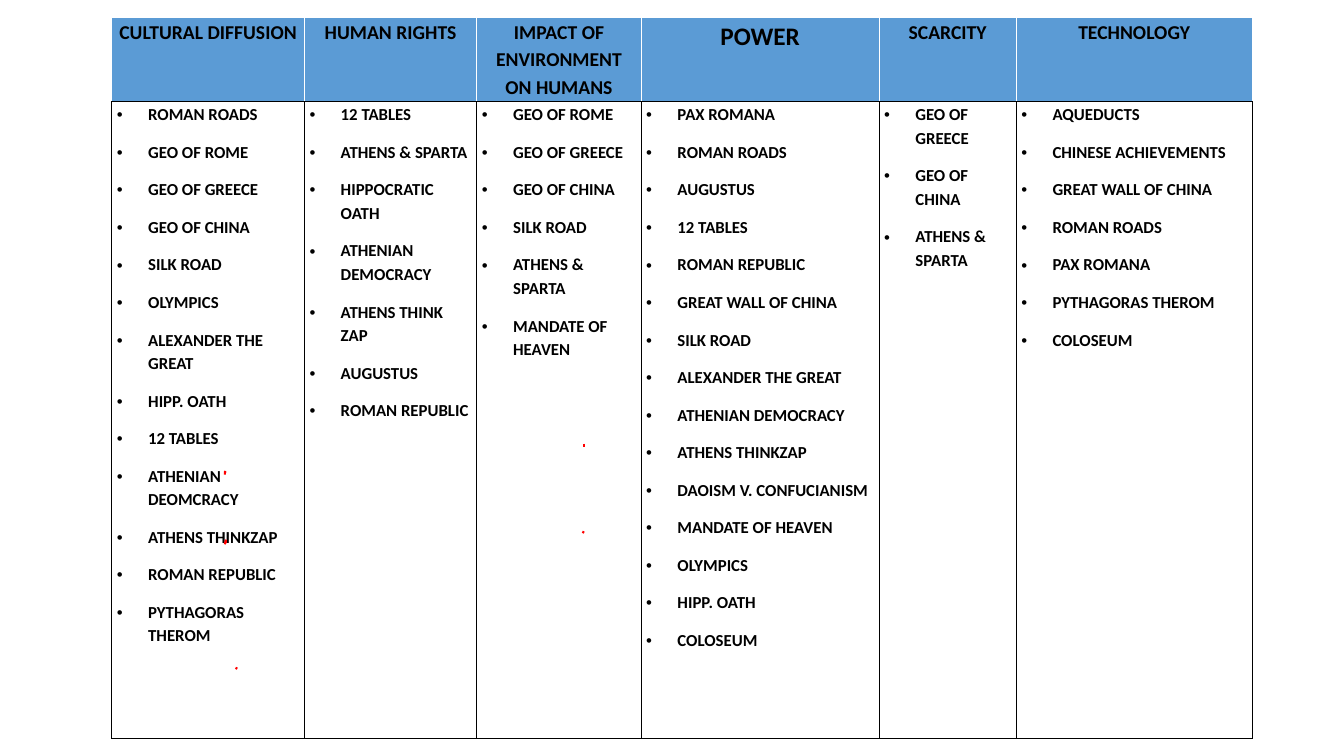
import dataclasses

import lxml.etree
import pptx
import pptx.dml.color
import pptx.enum.shapes
import pptx.enum.text
import pptx.oxml.ns
import pptx.table
import pptx.text.text
import pptx.util
from pptx.util import Inches

COLORS = {"header": "5B9BD5", "body": "FFFFFF", "text": "000000",
          "header_edge": "FFFFFF", "body_edge": "000000", "ink": "FF0000"}
FONT = "Calibri"
HEADER_HEIGHT, BODY_HEIGHT = 0.84, 6.32
TABLE_LEFT, TABLE_TOP = 1.11, 0.17
BULLET_INDENT = Inches(0.31)


@dataclasses.dataclass(frozen=True)
class Theme:
    heading: str
    width: float
    topics: tuple[str, ...]
    heading_size: int = 14


@dataclasses.dataclass(frozen=True)
class InkStroke:
    points: tuple[tuple[float, float], ...]


THEMES = (
    Theme("CULTURAL DIFFUSION", 1.91, (
        "ROMAN ROADS", "GEO OF ROME", "GEO OF GREECE", "GEO OF CHINA", "SILK ROAD",
        "OLYMPICS", "ALEXANDER THE GREAT", "HIPP. OATH", "12 TABLES",
        "ATHENIAN DEOMCRACY", "ATHENS THINKZAP", "ROMAN REPUBLIC", "PYTHAGORAS THEROM")),
    Theme("HUMAN RIGHTS", 1.71, (
        "12 TABLES", "ATHENS & SPARTA", "HIPPOCRATIC OATH", "ATHENIAN DEMOCRACY",
        "ATHENS THINK ZAP", "AUGUSTUS", "ROMAN REPUBLIC")),
    Theme("IMPACT OF ENVIRONMENT ON HUMANS", 1.63, (
        "GEO OF ROME", "GEO OF GREECE", "GEO OF CHINA", "SILK ROAD",
        "ATHENS & SPARTA", "MANDATE OF HEAVEN")),
    Theme("POWER", 2.36, (
        "PAX ROMANA", "ROMAN ROADS", "AUGUSTUS", "12 TABLES", "ROMAN REPUBLIC",
        "GREAT WALL OF CHINA", "SILK ROAD", "ALEXANDER THE GREAT",
        "ATHENIAN DEMOCRACY", "ATHENS THINKZAP", "DAOISM V. CONFUCIANISM",
        "MANDATE OF HEAVEN", "OLYMPICS", "HIPP. OATH", "COLOSEUM"), heading_size=18),
    Theme("SCARCITY", 1.36, ("GEO OF GREECE", "GEO OF CHINA", "ATHENS & SPARTA")),
    Theme("TECHNOLOGY", 2.34, (
        "AQUEDUCTS", "CHINESE ACHIEVEMENTS", "GREAT WALL OF CHINA", "ROMAN ROADS",
        "PAX ROMANA", "PYTHAGORAS THEROM", "COLOSEUM")),
)

INK_STROKES = (
    InkStroke(((2.24, 4.69), (2.23, 4.68), (2.23, 4.71))),
    InkStroke(((2.23, 5.4), (2.24, 5.36), (2.24, 5.39))),
    InkStroke(((2.35, 6.62), (2.34, 6.64))),
    InkStroke(((5.79, 4.4), (5.79, 4.43))),
    InkStroke(((5.79, 5.27), (5.78, 5.29))),
)


def rgb(name: str) -> pptx.dml.color.RGBColor:
    return pptx.dml.color.RGBColor.from_string(COLORS[name])


def add_element(parent, tag: str, **attributes: str):
    return lxml.etree.SubElement(parent, pptx.oxml.ns.qn(tag), attributes)


def write(frame: pptx.text.text.TextFrame, lines: tuple[str, ...], *, size: int,
          centered: bool = False, bulleted: bool = False) -> None:
    for index, line in enumerate(lines):
        paragraph = frame.add_paragraph() if index else frame.paragraphs[0]
        paragraph.line_spacing = 1.15
        paragraph.space_after = pptx.util.Pt(10)
        if centered:
            paragraph.alignment = pptx.enum.text.PP_ALIGN.CENTER
        if bulleted:
            properties = paragraph._p.get_or_add_pPr()
            properties.set("marL", str(BULLET_INDENT))
            properties.set("indent", str(-BULLET_INDENT))
            add_element(properties, "a:buFont", typeface="Arial")
            add_element(properties, "a:buChar", char="•")
        run = paragraph.add_run()
        run.text = line
        run.font.name = FONT
        run.font.size = pptx.util.Pt(size)
        run.font.bold = True
        run.font.color.rgb = rgb("text")


def format_cell(cell: pptx.table._Cell, fill: str, edge: str, bottom_edge: str) -> None:
    cell.margin_left = cell.margin_right = Inches(0.05)
    cell.margin_top = cell.margin_bottom = 0
    properties = cell._tc.get_or_add_tcPr()
    for side in "LRTB":
        border = add_element(properties, f"a:ln{side}", w=str(pptx.util.Pt(1)))
        color = COLORS[bottom_edge if side == "B" else edge]
        add_element(add_element(border, "a:solidFill"), "a:srgbClr", val=color)
    cell.fill.solid()
    cell.fill.fore_color.rgb = rgb(fill)


def add_theme_table(slide, themes: tuple[Theme, ...]) -> None:
    table = slide.shapes.add_table(
        2, len(themes), Inches(TABLE_LEFT), Inches(TABLE_TOP),
        Inches(sum(theme.width for theme in themes)),
        Inches(HEADER_HEIGHT + BODY_HEIGHT)).table
    table.first_row = table.horz_banding = False
    table.rows[0].height = Inches(HEADER_HEIGHT)
    table.rows[1].height = Inches(BODY_HEIGHT)
    for column, theme in enumerate(themes):
        table.columns[column].width = Inches(theme.width)
        heading, topics = table.cell(0, column), table.cell(1, column)
        format_cell(heading, "header", "header_edge", "body_edge")
        format_cell(topics, "body", "body_edge", "body_edge")
        write(heading.text_frame, (theme.heading,), size=theme.heading_size, centered=True)
        write(topics.text_frame, theme.topics, size=12, bulleted=True)


def add_ink_stroke(slide, stroke: InkStroke) -> None:
    """Draw a straight stroke as a connector and a bent one as an open freeform."""
    start, *rest = [(Inches(x), Inches(y)) for x, y in stroke.points]
    if len(rest) == 1:
        mark = slide.shapes.add_connector(
            pptx.enum.shapes.MSO_CONNECTOR.STRAIGHT, *start, *rest[0])
    else:
        builder = slide.shapes.build_freeform(*start)
        builder.add_line_segments(rest, close=False)
        mark = builder.convert_to_shape()
        mark.fill.background()
    mark.line.color.rgb = rgb("ink")
    mark.line.width = pptx.util.Pt(1.5)
    add_element(mark._element.spPr, "a:effectLst")


def main() -> None:
    deck = pptx.Presentation()
    deck.slide_width, deck.slide_height = Inches(13.33), Inches(7.5)
    slide = deck.slides.add_slide(deck.slide_layouts[6])
    add_theme_table(slide, THEMES)
    for stroke in INK_STROKES:
        add_ink_stroke(slide, stroke)
    deck.save("out.pptx")


if __name__ == "__main__":
    main()
